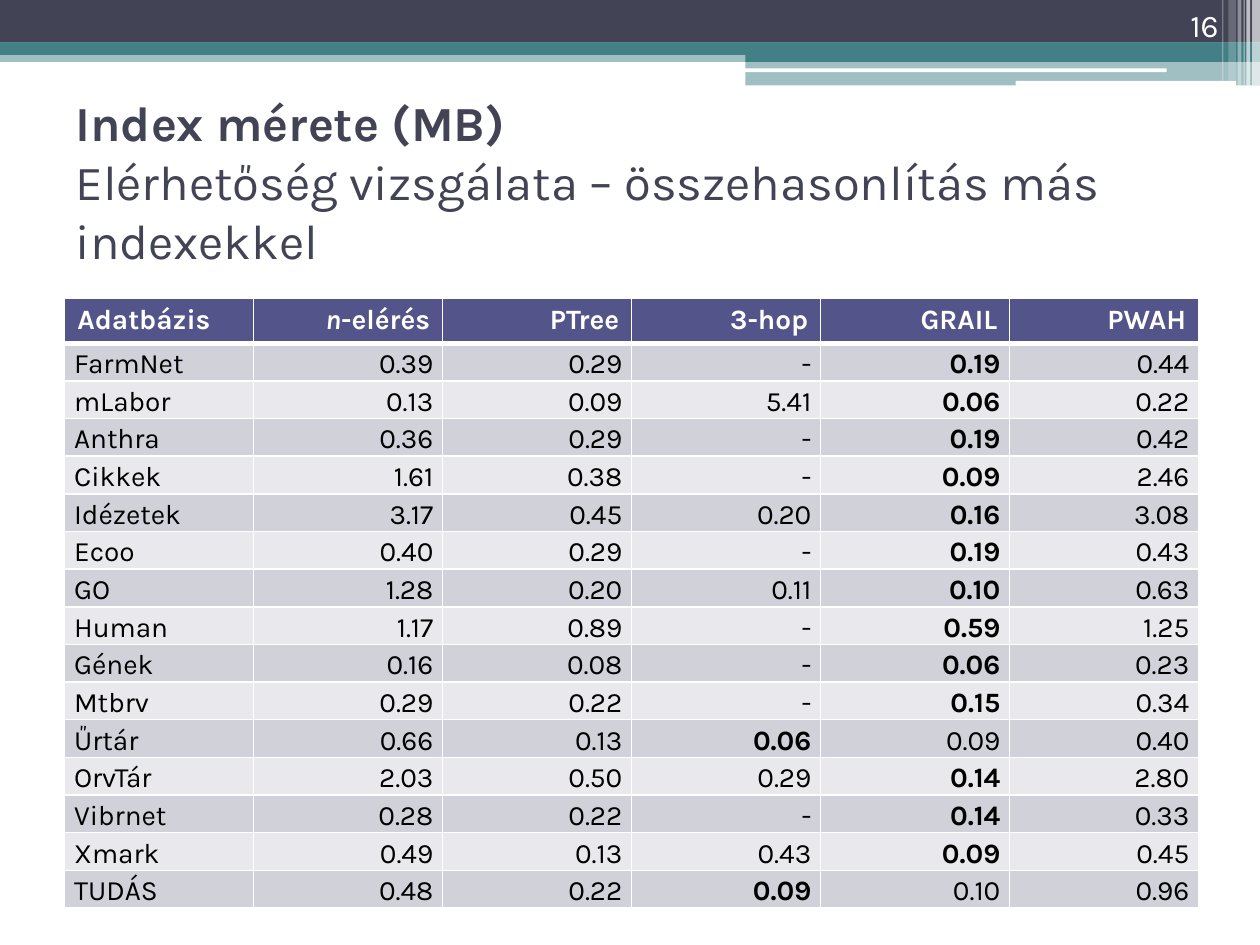
from lxml import etree
from pptx import Presentation
from pptx.dml.color import RGBColor
from pptx.enum import shapes, text
from pptx.oxml import ns
from pptx.util import Pt

COLORS = {
    "navy": "424456", "teal": "438086", "white": "FFFFFF", "black": "000000",
    "header": "53548A", "odd": "D1D1DA", "even": "E9E9ED",
}
FONT = "Karla"


def style(font, size, color, bold=False):
    font.name = FONT
    font.size = Pt(size)
    font.bold = bold
    font.color.rgb = RGBColor.from_string(COLORS[color])


def add_borders(cell, bottom_width):
    properties = cell._tc.get_or_add_tcPr()
    widths = {"lnL": 1, "lnR": 1, "lnT": 1, "lnB": bottom_width}
    for position, (side, width) in enumerate(widths.items()):
        line = etree.Element(ns.qn(f"a:{side}"), w=str(Pt(width)))
        fill = etree.SubElement(line, ns.qn("a:solidFill"))
        etree.SubElement(fill, ns.qn("a:srgbClr"), val=COLORS["white"])
        properties.insert(position, line)


deck = Presentation()
deck.slide_width, deck.slide_height = Pt(720), Pt(540)
page = deck.slides.add_slide(deck.slide_layouts[5])

RECT = shapes.MSO_SHAPE.RECTANGLE
ROUND = shapes.MSO_SHAPE.ROUNDED_RECTANGLE
bars = [
    (RECT, 0, 28.8, 720, 6.6, "teal", 50),
    (RECT, 0, 0, 720, 24.4, "navy", 100),
    (RECT, 0, 24.2, 720, 7.2, "teal", 100),
    (RECT, 426, 28.2, 294, 7.2, "teal", 100),
    (RECT, 426, 34.6, 294, 14.2, "teal", 50),
    (ROUND, 425.5, 39.1, 241.2, 2.2, "white", 100),
    (ROUND, 580.4, 46.2, 126, 2.9, "white", 100),
    (RECT, 715.5, 0, 4.5, 49, "white", 65),
    (RECT, 712.2, 0, 2.2, 49, "white", 65),
    (RECT, 710.6, 0, 0.7, 49, "white", 60),
    (RECT, 707.2, 0, 2.2, 49, "white", 40),
    (RECT, 702, 0, 4.3, 46.1, "white", 20),
    (RECT, 698.4, 0, 0.7, 46.1, "white", 30),
]
for kind, left, top, width, height, color, opacity in bars:
    bar = page.shapes.add_shape(kind, Pt(left), Pt(top), Pt(width), Pt(height))
    bar.shadow.inherit = False
    bar.line.fill.background()
    bar.fill.solid()
    bar.fill.fore_color.rgb = RGBColor.from_string(COLORS[color])
    if opacity < 100:
        tint = bar._element.spPr.find(".//" + ns.qn("a:srgbClr"))
        etree.SubElement(tint, ns.qn("a:alpha"), val=str(opacity * 1000))

title = page.shapes.title
title.left, title.top, title.width, title.height = Pt(36), Pt(61.2), Pt(648), Pt(84.2)
title.text_frame.auto_size = text.MSO_AUTO_SIZE.NONE
title.text_frame.vertical_anchor = text.MSO_ANCHOR.MIDDLE
para = title.text_frame.paragraphs[0]
para.alignment = text.PP_ALIGN.LEFT
style(para.font, 28, "navy")
span = para.add_run()
span.text = "Index mérete (MB)"
span.font.bold = True
para.add_line_break()
para.add_run().text = "Elérhetőség vizsgálata – összehasonlítás más indexekkel"

header = ["Adatbázis", "n-elérés", "PTree", "3-hop", "GRAIL", "PWAH"]
sizes = [
    "FarmNet 0.39 0.29 - 0.19 0.44",
    "mLabor 0.13 0.09 5.41 0.06 0.22",
    "Anthra 0.36 0.29 - 0.19 0.42",
    "Cikkek 1.61 0.38 - 0.09 2.46",
    "Idézetek 3.17 0.45 0.20 0.16 3.08",
    "Ecoo 0.40 0.29 - 0.19 0.43",
    "GO 1.28 0.20 0.11 0.10 0.63",
    "Human 1.17 0.89 - 0.59 1.25",
    "Gének 0.16 0.08 - 0.06 0.23",
    "Mtbrv 0.29 0.22 - 0.15 0.34",
    "Űrtár 0.66 0.13 0.06 0.09 0.40",
    "OrvTár 2.03 0.50 0.29 0.14 2.80",
    "Vibrnet 0.28 0.22 - 0.14 0.33",
    "Xmark 0.49 0.13 0.43 0.09 0.45",
    "TUDÁS 0.48 0.22 0.09 0.10 0.96",
]
rows = [header] + [line.split() for line in sizes]
table = page.shapes.add_table(
    len(rows), len(header), Pt(37), Pt(170.2), Pt(648), Pt(347.5)
).table
for row_index, row in enumerate(rows):
    is_header = row_index == 0
    table.rows[row_index].height = Pt(25 if is_header else 21.5)
    fill = "header" if is_header else ("odd" if row_index % 2 else "even")
    smallest = min(value for value in row[1:] if value != "-")
    for column, value in enumerate(row):
        cell = table.cell(row_index, column)
        cell.fill.solid()
        cell.fill.fore_color.rgb = RGBColor.from_string(COLORS[fill])
        add_borders(cell, 3 if is_header else 1)
        para = cell.text_frame.paragraphs[0]
        para.alignment = text.PP_ALIGN.RIGHT if column else text.PP_ALIGN.LEFT
        if is_header:
            style(para.font, 16, "white", True)
        else:
            cell.margin_left = cell.margin_right = Pt(5.4)
            cell.margin_top = cell.margin_bottom = 0
            para.line_spacing = 1.15
            style(para.font, 16, "black", column > 0 and value == smallest)
        if value == "n-elérés":
            span = para.add_run()
            span.text = "n"
            span.font.italic = True
            value = "-elérés"
        para.add_run().text = value

box = page.shapes.add_textbox(Pt(643.7), 0, Pt(59.8), Pt(28.8))
box.text_frame.word_wrap = True
box.text_frame.vertical_anchor = text.MSO_ANCHOR.BOTTOM
para = box.text_frame.paragraphs[0]
para.text = "16"
para.alignment = text.PP_ALIGN.RIGHT
style(para.font, 18, "white")

deck.save("out.pptx")
